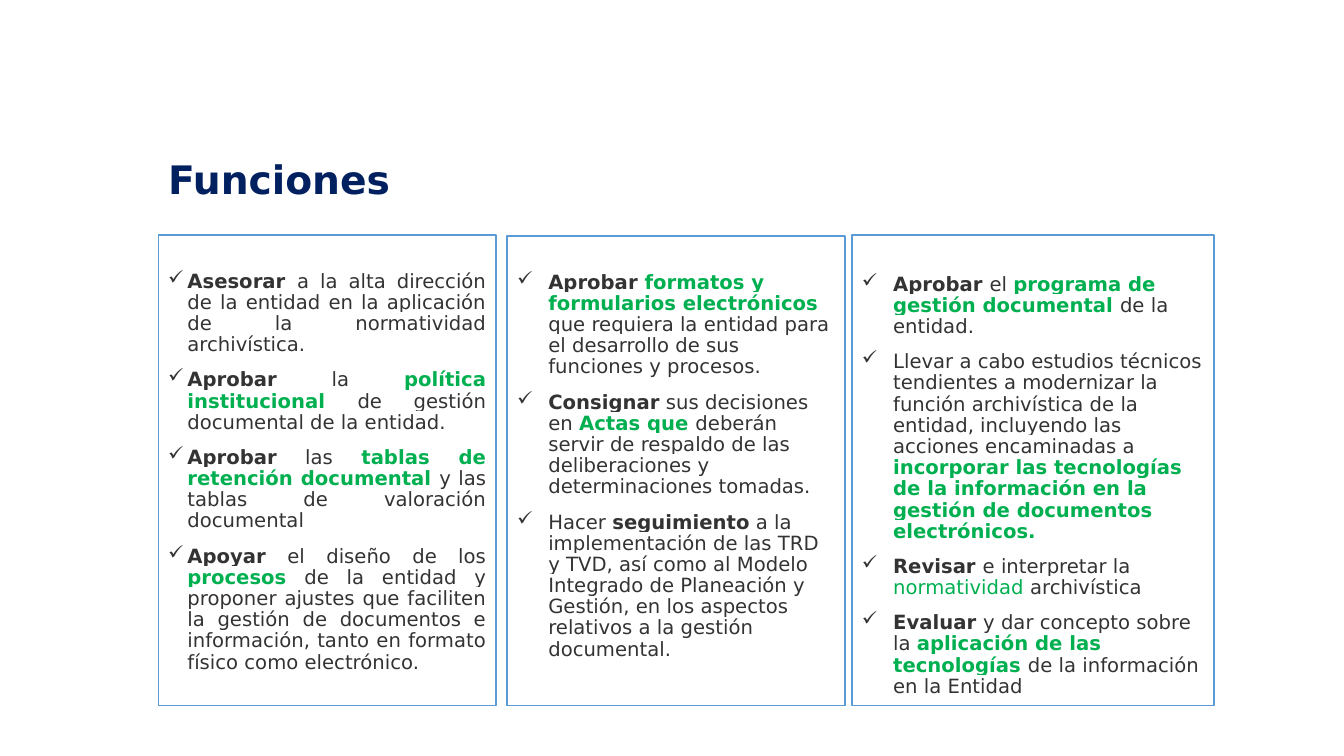
from lxml import etree
from pptx import Presentation
from pptx.dml.color import RGBColor
from pptx.enum import shapes, text
from pptx.oxml import ns
from pptx.util import Inches, Pt

WHITE = RGBColor(0xFF, 0xFF, 0xFF)
GREY = RGBColor(0x33, 0x33, 0x33)
GREEN = RGBColor(0x00, 0xB0, 0x50)
NAVY = RGBColor(0x00, 0x20, 0x60)
BLUE = RGBColor(0x5B, 0x9B, 0xD5)

# Run styles: colour and weight
PLAIN, BOLD = (GREY, False), (GREY, True)
KEY, KEY_LIGHT = (GREEN, True), (GREEN, False)

ADVISE = [
    [("Asesorar ", BOLD),
     ("a la alta dirección de la entidad en la aplicación de la normatividad archivística.", PLAIN)],
    [("Aprobar", BOLD), (" la ", PLAIN), ("política institucional ", KEY),
     ("de gestión documental de la entidad.", PLAIN)],
    [("Aprobar", BOLD), (" las ", PLAIN), ("tablas de retención documental ", KEY),
     ("y las tablas de valoración documental ", PLAIN)],
    [("Apoyar", BOLD), (" el diseño de los ", PLAIN), ("procesos", KEY),
     (" de la entidad y proponer ajustes que faciliten la gestión de documentos e "
      "información, tanto en formato físico como electrónico.", PLAIN)],
]
RECORD = [
    [("Aprobar ", BOLD), ("formatos y formularios electrónicos", KEY),
     (" que requiera la entidad para el desarrollo de sus funciones y procesos.", PLAIN)],
    [("Consignar", BOLD), (" sus decisiones en ", PLAIN), ("Actas que ", KEY),
     ("deberán servir de respaldo de las deliberaciones y determinaciones tomadas.", PLAIN)],
    [("Hacer ", PLAIN), ("seguimiento", BOLD),
     (" a la implementación de las TRD y TVD, así como al Modelo Integrado de Planeación "
      "y Gestión, en los aspectos relativos a la gestión documental.", PLAIN)],
]
MODERNIZE = [
    [("Aprobar ", BOLD), ("el ", PLAIN), ("programa de gestión documental ", KEY),
     ("de la entidad.", PLAIN)],
    [("Llevar a cabo estudios técnicos tendientes a modernizar la función archivística de "
      "la entidad, incluyendo las acciones encaminadas a ", PLAIN),
     ("incorporar las tecnologías de la información en la gestión de documentos "
      "electrónicos.", KEY)],
    [("Revisar ", BOLD), ("e interpretar la ", PLAIN), ("normatividad ", KEY_LIGHT),
     ("archivística", PLAIN)],
    [("Evaluar ", BOLD), ("y dar concepto sobre la ", PLAIN),
     ("aplicación de las tecnologías ", KEY), ("de la información en la Entidad", PLAIN)],
]


class Deck:
    font = "DejaVu Sans"
    spacing = 0.9

    def __init__(self):
        self.prs = Presentation()
        self.prs.slide_width, self.prs.slide_height = Inches(13.33), Inches(7.5)
        self.s = self.prs.slides.add_slide(self.prs.slide_layouts[6])

    def run(self, p, words, size, color, bold):
        r = p.add_run()
        r.text = words
        r.font.size, r.font.bold, r.font.name = Pt(size), bold, self.font
        r.font.color.rgb = color
        # White highlight sits between the fill and the typeface
        hl = etree.Element(ns.qn("a:highlight"))
        etree.SubElement(hl, ns.qn("a:srgbClr"), val=str(WHITE))
        r.font.fill._xPr.find(ns.qn("a:solidFill")).addnext(hl)

    def title(self, words, left, top, width, height):
        sp = self.s.shapes.add_textbox(*map(Inches, (left, top, width, height)))
        tf = sp.text_frame
        tf.word_wrap = True
        tf.vertical_anchor = text.MSO_ANCHOR.BOTTOM
        p = tf.paragraphs[0]
        p.line_spacing = self.spacing
        self.run(p, words, 28, NAVY, True)

    def check(self, p, indent):
        pPr = p._p.get_or_add_pPr()
        pPr.set("marL", str(Inches(indent)))
        pPr.set("indent", str(-Inches(indent)))
        etree.SubElement(pPr, ns.qn("a:buChar"), char="✓")

    def panel(self, items, left, top, width, height, inset, indent, align):
        sp = self.s.shapes.add_shape(shapes.MSO_SHAPE.RECTANGLE,
                                     *map(Inches, (left, top, width, height)))
        sp.shadow.inherit = False
        sp.fill.solid()
        sp.fill.fore_color.rgb = WHITE
        sp.line.color.rgb = BLUE
        sp.line.width = Pt(1)
        tf = sp.text_frame
        tf.word_wrap = True
        tf.vertical_anchor = text.MSO_ANCHOR.TOP
        tf.margin_top = Inches(inset)
        for i, item in enumerate(items):
            p = tf.add_paragraph() if i else tf.paragraphs[0]
            self.check(p, indent)
            p.alignment = align
            p.line_spacing = self.spacing
            p.space_before = Pt(10 if i else 0)
            for words, (color, bold) in item:
                self.run(p, words, 14, color, bold)


def main():
    deck = Deck()
    left, justify = text.PP_ALIGN.LEFT, text.PP_ALIGN.JUSTIFY

    # Heading
    deck.title("Funciones", 1.57, 1.54, 10.2, 0.52)

    # Three panels of functions
    deck.panel(ADVISE, 1.57, 2.33, 3.35, 4.67, 0.36, 0.19, justify)
    deck.panel(RECORD, 5.03, 2.34, 3.35, 4.66, 0.36, 0.31, left)
    deck.panel(MODERNIZE, 8.45, 2.33, 3.59, 4.67, 0.39, 0.31, left)

    deck.prs.save("out.pptx")


if __name__ == "__main__":
    main()
